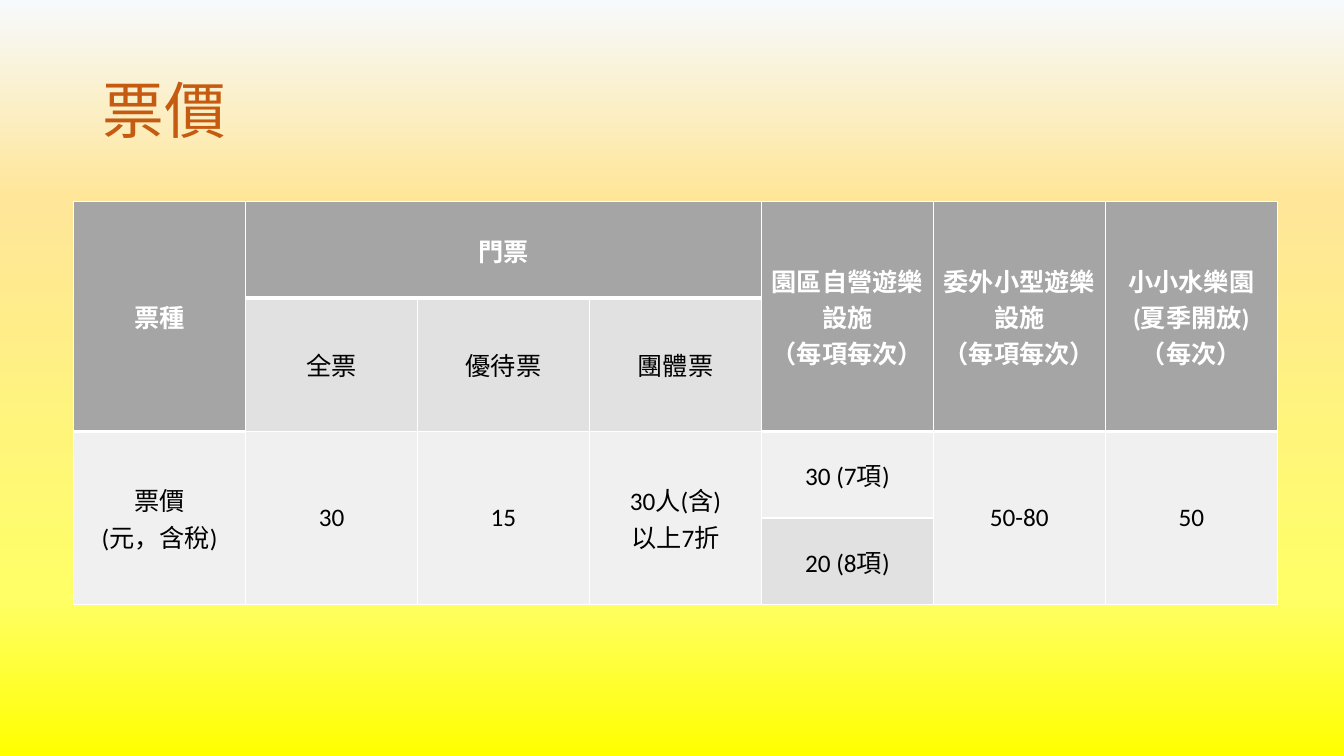
from dataclasses import dataclass

from lxml import etree
from pptx import Presentation
from pptx.dml.color import RGBColor
from pptx.enum.text import MSO_ANCHOR, PP_ALIGN
from pptx.oxml.ns import qn
from pptx.slide import Slide
from pptx.table import Table, _Cell
from pptx.util import Inches, Pt

MIDDLE = MSO_ANCHOR.MIDDLE
CENTER = PP_ALIGN.CENTER

WHITE, BLACK, ORANGE = "FFFFFF", "000000", "C55A11"
HEADER_GRAY, DARK_BAND, LIGHT_BAND = "A5A5A5", "E1E1E1", "F0F0F0"
BACKGROUND_STOPS = [(0, "F7FAFD"), (26, "FFE699"), (79, "FFFF66"), (100, "FFFF00")]

COLUMN_COUNT = 7
TABLE_WIDTH = 11.94
ROW_HEIGHTS = [0.96, 1.32, 0.86, 0.86]


@dataclass
class PriceCell:
    row: int
    column: int
    text: str
    fill: str
    rows: int = 1
    columns: int = 1

    @property
    def is_header(self) -> bool:
        return self.fill == HEADER_GRAY


PRICE_CELLS = [
    PriceCell(0, 0, "票種", HEADER_GRAY, rows=2),
    PriceCell(0, 1, "門票", HEADER_GRAY, columns=3),
    PriceCell(0, 4, "園區自營遊樂設施\v（每項每次）", HEADER_GRAY, rows=2),
    PriceCell(0, 5, "委外小型遊樂設施\v（每項每次）", HEADER_GRAY, rows=2),
    PriceCell(0, 6, "小小水樂園\v(夏季開放)\v（每次）", HEADER_GRAY, rows=2),
    PriceCell(1, 1, "全票", DARK_BAND),
    PriceCell(1, 2, "優待票", DARK_BAND),
    PriceCell(1, 3, "團體票", DARK_BAND),
    PriceCell(2, 0, "票價\v(元，含稅)", LIGHT_BAND, rows=2),
    PriceCell(2, 1, "30", LIGHT_BAND, rows=2),
    PriceCell(2, 2, "15", LIGHT_BAND, rows=2),
    PriceCell(2, 3, "30人(含)\v以上7折", LIGHT_BAND, rows=2),
    PriceCell(2, 4, "30 (7項)", LIGHT_BAND),
    PriceCell(2, 5, "50-80", LIGHT_BAND, rows=2),
    PriceCell(2, 6, "50", LIGHT_BAND, rows=2),
    PriceCell(3, 4, "20 (8項)", DARK_BAND),
]


def color(value: str) -> RGBColor:
    return RGBColor.from_string(value)


def set_background(slide: Slide) -> None:
    fill = slide.background.fill
    fill.gradient()
    fill.gradient_angle = 270
    stops = next(slide.element.iter(qn("a:gsLst")))
    for stop in list(stops):
        stops.remove(stop)
    for percent, value in BACKGROUND_STOPS:
        stop = etree.SubElement(stops, qn("a:gs"), pos=str(percent * 1000))
        etree.SubElement(stop, qn("a:srgbClr"), val=value)


def add_title(slide: Slide) -> None:
    frame = slide.shapes.add_textbox(
        Inches(0.92), Inches(0.4), Inches(11.5), Inches(1.45)
    ).text_frame
    frame.word_wrap = True
    frame.vertical_anchor = MIDDLE
    paragraph = frame.paragraphs[0]
    paragraph.text = "票價"
    paragraph.line_spacing = 0.9
    paragraph.font.name = "Noto Sans CJK SC"
    paragraph.font.size = Pt(44)
    paragraph.font.color.rgb = color(ORANGE)


def set_borders(cell: _Cell, is_header: bool) -> None:
    """Draw white borders; a body cell takes its top line from the cell above."""
    widths = {"a:lnL": 1, "a:lnR": 1}
    if is_header:
        widths["a:lnT"] = 1
    widths["a:lnB"] = 3 if is_header else 1
    properties = cell._tc.get_or_add_tcPr()
    for position, (tag, width) in enumerate(widths.items()):
        line = etree.Element(qn(tag), w=str(Pt(width)))
        fill = etree.SubElement(line, qn("a:solidFill"))
        etree.SubElement(fill, qn("a:srgbClr"), val=WHITE)
        properties.insert(position, line)


def fill_cell(table: Table, price: PriceCell) -> None:
    cell = table.cell(price.row, price.column)
    last_row = price.row + price.rows - 1
    last_column = price.column + price.columns - 1
    if price.rows > 1 or price.columns > 1:
        cell.merge(table.cell(last_row, last_column))
    for row in range(price.row, last_row + 1):
        for column in range(price.column, last_column + 1):
            part = table.cell(row, column)
            part.fill.solid()
            part.fill.fore_color.rgb = color(price.fill)
            set_borders(part, price.is_header)

    cell.vertical_anchor = MIDDLE
    cell.margin_left = cell.margin_right = Inches(0.03)
    cell.margin_top = cell.margin_bottom = Inches(0.03)
    paragraph = cell.text_frame.paragraphs[0]
    paragraph.text = price.text
    paragraph.alignment = CENTER
    paragraph.font.name = "Calibri"
    paragraph.font.size = Pt(18)
    paragraph.font.bold = price.is_header
    paragraph.font.color.rgb = color(WHITE if price.is_header else BLACK)


def add_price_table(slide: Slide) -> None:
    table = slide.shapes.add_table(
        len(ROW_HEIGHTS), COLUMN_COUNT,
        Inches(0.73), Inches(2), Inches(TABLE_WIDTH), Inches(sum(ROW_HEIGHTS)),
    ).table
    table.first_row = False
    table.horz_banding = False
    for row, height in zip(table.rows, ROW_HEIGHTS):
        row.height = Inches(height)
    for price in PRICE_CELLS:
        fill_cell(table, price)


def main() -> None:
    presentation = Presentation()
    presentation.slide_width = Inches(13.33)
    presentation.slide_height = Inches(7.5)
    slide = presentation.slides.add_slide(presentation.slide_layouts[6])
    set_background(slide)
    add_title(slide)
    add_price_table(slide)
    presentation.save("out.pptx")


if __name__ == "__main__":
    main()
